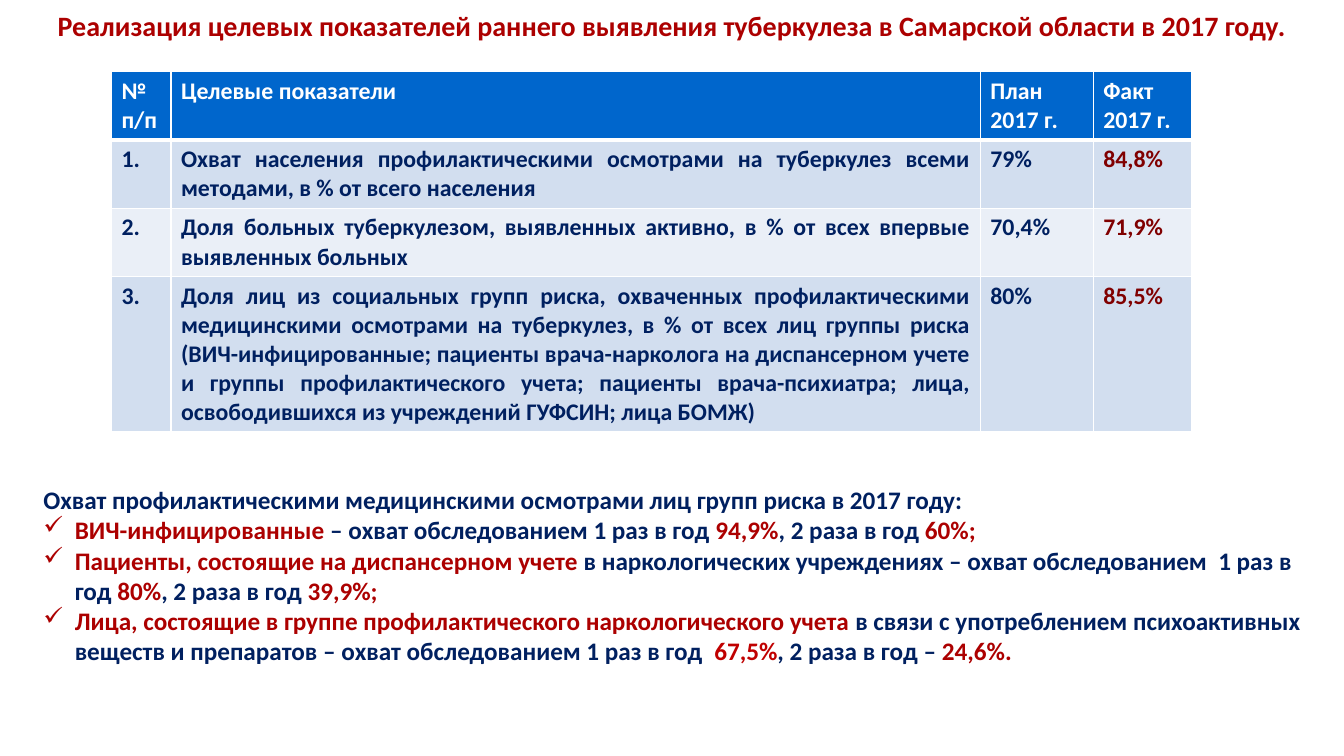
"""Build the slide on early detection of tuberculosis in 2017."""
import pptx
import pptx.util
import pptx.dml.color
import pptx.enum.text
import pptx.oxml
import pptx.oxml.ns

Pt = pptx.util.Pt
RGB = pptx.dml.color.RGBColor.from_string
ALIGN = pptx.enum.text.PP_ALIGN
MIDDLE = pptx.enum.text.MSO_ANCHOR.MIDDLE

THEME = {
    "font": "Calibri", "title": 20, "cell": 17, "body": 18,
    "red": "AC0000", "bright": "C00000", "dark": "800000", "navy": "002060",
    "white": "FFFFFF", "head": "0066CC", "odd": "D2DEEF", "even": "EAEFF7",
}

TITLE = "Реализация целевых показателей раннего выявления туберкулеза в Самарской области в 2017 году."
ROWS = [
    ("№ п/п", "Целевые показатели", "План 2017 г.", "Факт\n2017 г."),
    ("1.", "Охват населения профилактическими осмотрами на туберкулез всеми методами, "
     "в % от всего населения", "79%", "84,8%"),
    ("2.", "Доля больных туберкулезом, выявленных активно, в % от всех впервые "
     "выявленных больных", "70,4%", "71,9%"),
    ("3.", "Доля лиц из социальных групп риска, охваченных профилактическими медицинскими "
     "осмотрами на туберкулез, в % от всех лиц группы риска (ВИЧ-инфицированные; пациенты "
     "врача-нарколога на диспансерном учете и группы профилактического учета; пациенты "
     "врача-психиатра; лица, освободившихся из учреждений ГУФСИН; лица БОМЖ)", "80%", "85,5%"),
]
LEAD = "Охват профилактическими медицинскими осмотрами лиц групп риска в 2017 году:"
GROUPS = [
    [("ВИЧ-инфицированные ", "red"), ("– охват обследованием 1 раз в год ", "navy"),
     ("94,9%", "red"), (", 2 раза в год ", "navy"), ("60%;", "red")],
    [("Пациенты, состоящие на диспансерном учете ", "red"),
     ("в наркологических учреждениях – охват обследованием  1 раз в год ", "navy"),
     ("80%", "red"), (", 2 раза в год ", "navy"), ("39,9%;", "red")],
    [("Лица, состоящие в группе профилактического наркологического учета ", "red"),
     ("в связи с употреблением психоактивных веществ и препаратов – охват обследованием "
      "1 раз в год  ", "navy"),
     ("67,5%", "bright"), (", 2 раза в год – ", "navy"), ("24,6%.", "red")],
]

WIDTHS = (42.5, 578.2, 80.6, 70.6)
HEIGHTS = (48.7, 48.7, 48.7, 111)
INDENT = 22.5


def style(par, size, color=None):
    """Set the font of a whole paragraph."""
    font = par.font
    font.name, font.size, font.bold = THEME["font"], Pt(THEME[size]), True
    if color:
        font.color.rgb = RGB(THEME[color])


def add_text(slide, left, top, width, height):
    """Add a wrapped, vertically centred text box and return its frame."""
    frame = slide.shapes.add_textbox(Pt(left), Pt(top), Pt(width), Pt(height)).text_frame
    frame.word_wrap = True
    frame.vertical_anchor = MIDDLE
    return frame


def add_edges(cell, head):
    """Draw white lines round a cell, with a thick one under the header."""
    props = cell._tc.get_or_add_tcPr()
    for side in "LRTB":
        width = Pt(3 if head and side == "B" else 1)
        props.append(pptx.oxml.parse_xml(
            f'<a:ln{side} {pptx.oxml.ns.nsdecls("a")} w="{width}"><a:solidFill>'
            f'<a:srgbClr val="{THEME["white"]}"/></a:solidFill></a:ln{side}>'))


def add_goals(slide):
    """Add the table of targets and results."""
    table = slide.shapes.add_table(
        len(ROWS), len(WIDTHS), Pt(79.6), Pt(51.3), Pt(sum(WIDTHS)), Pt(sum(HEIGHTS))).table
    for col, width in zip(table.columns, WIDTHS):
        col.width = Pt(width)
    for r, (texts, height) in enumerate(zip(ROWS, HEIGHTS)):
        table.rows[r].height = Pt(height)
        fill = "head" if r == 0 else "odd" if r % 2 else "even"
        for c, text in enumerate(texts):
            cell = table.cell(r, c)
            cell.text = text
            add_edges(cell, r == 0)
            cell.fill.solid()
            cell.fill.fore_color.rgb = RGB(THEME[fill])
            color = "white" if r == 0 else "dark" if c == 3 else "navy"
            for par in cell.text_frame.paragraphs:
                style(par, "cell", color)
                if r and c == 1:
                    par.alignment = ALIGN.JUSTIFY


def add_check(par):
    """Give a paragraph a hanging check mark."""
    props = par._p.get_or_add_pPr()
    props.set("marL", str(Pt(INDENT)))
    props.set("indent", str(-Pt(INDENT)))
    props.insert(0, pptx.oxml.parse_xml(
        f'<a:buChar {pptx.oxml.ns.nsdecls("a")} char="✓"/>'))


def add_groups(slide):
    """Add the list of risk groups."""
    frame = add_text(slide, 23.8, 325.4, 930.2, 193)
    frame.margin_bottom = Pt(25.6)
    lead = frame.paragraphs[0]
    lead.text = LEAD
    style(lead, "body", "navy")
    for group in GROUPS:
        par = frame.add_paragraph()
        style(par, "body")
        add_check(par)
        for text, color in group:
            run = par.add_run()
            run.text = text
            run.font.color.rgb = RGB(THEME[color])


def main():
    """Build and save the slide."""
    deck = pptx.Presentation()
    deck.slide_width, deck.slide_height = Pt(960), Pt(540)
    slide = deck.slides.add_slide(deck.slide_layouts[6])
    title = add_text(slide, 0, 0, 960, 36).paragraphs[0]
    title.text = TITLE
    title.alignment = ALIGN.CENTER
    style(title, "title", "red")
    add_goals(slide)
    add_groups(slide)
    deck.save("out.pptx")


if __name__ == "__main__":
    main()
